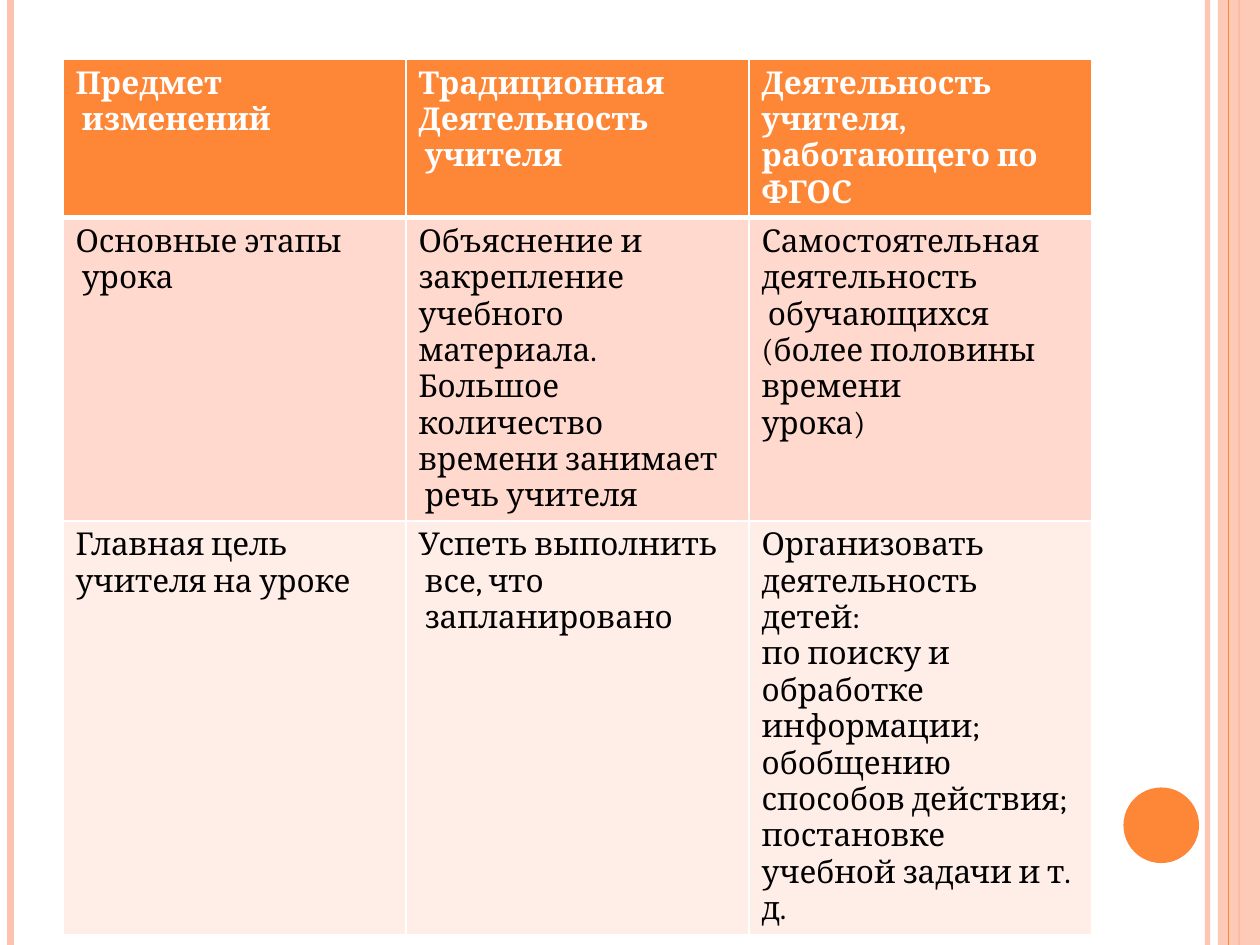
from lxml import etree
from pptx import Presentation
from pptx import util as u
from pptx.dml.color import RGBColor
from pptx.enum import shapes
from pptx.oxml import ns

COLUMNS, ROWS = 120, 90
ORANGE, PEACH, WHITE, BLACK = "FE8637", "FEC3AE", "FFFFFF", "000000"
INDENT = "›"  # marks a paragraph whose first line is indented

HEADER = [
    ["Предмет", "›изменений"],
    ["Традиционная", "Деятельность", "›учителя"],
    ["Деятельность учителя,", "работающего по ФГОС"],
]
STAGES = [
    ["Основные этапы", "›урока"],
    ["Объяснение и", "закрепление", "учебного материала.",
     "Большое количество", "времени занимает", "›речь учителя"],
    ["Самостоятельная деятельность",
     "›обучающихся (более половины времени", "урока)"],
]
GOAL = [
    ["Главная цель", "учителя на уроке"],
    ["Успеть выполнить", "›все, что", "›запланировано"],
    ["Организовать деятельность детей:",
     "по поиску и обработке информации;",
     "обобщению способов действия;",
     "постановке учебной задачи и т. д."],
]
# cells, height in grid rows, fill, text colour, bold, top and bottom border
TABLE_ROWS = [
    (HEADER, 14.9, ORANGE, WHITE, True, 1, 3),
    (STAGES, 28.9, "FFD9CE", BLACK, False, 3, 1),
    (GOAL, 39.4, "FFEDE8", BLACK, False, 1, 1),
]


def colour(value):
    return RGBColor.from_string(value)


def add_node(parent, tag, **attributes):
    return etree.SubElement(parent, ns.qn(tag), attributes)


def set_opacity(element, percent):
    """Apply an opacity to the first solid colour inside the element."""
    if percent < 100:
        srgb = next(element.iter(ns.qn("a:srgbClr")))
        add_node(srgb, "a:alpha", val=str(percent * 1000))


class SlideBuilder:
    """Holds the style and the slide; lengths are in grid columns and rows."""

    font = {"name": "Cambria", "size": u.Pt(18)}

    def __init__(self, deck):
        self.unit_x = deck.slide_width / COLUMNS
        self.unit_y = deck.slide_height / ROWS
        self.page = deck.slides.add_slide(deck.slide_layouts[6])
        background = self.page.background.fill
        background.solid()
        background.fore_color.rgb = colour(WHITE)

    def place(self, column, row):
        return round(column * self.unit_x), round(row * self.unit_y)

    def stripe(self, column, line_colour, width, opacity=100):
        """Draw a vertical line over the full height of the slide."""
        line = self.page.shapes.add_connector(
            shapes.MSO_CONNECTOR.STRAIGHT,
            *self.place(column, 0), *self.place(column, ROWS))
        line.line.color.rgb = colour(line_colour)
        line.line.width = u.Pt(width)
        properties = line._element.spPr
        set_opacity(properties, opacity)
        add_node(properties, "a:effectLst")

    def shape(self, kind, column, row, width, height, fill, opacity=100):
        shape = self.page.shapes.add_shape(
            kind, *self.place(column, row), *self.place(width, height))
        shape.shadow.inherit = False
        shape.fill.solid()
        shape.fill.fore_color.rgb = colour(fill)
        shape.line.fill.background()
        set_opacity(shape._element.spPr, opacity)

    def table(self, column, row, width, rows):
        height = sum(entry[1] for entry in rows)
        count = len(rows[0][0])
        table = self.page.shapes.add_table(
            len(rows), count,
            *self.place(column, row), *self.place(width, height)).table
        for table_column in table.columns:
            table_column.width = self.place(width / count, 0)[0]
        for r, (cells, row_height, fill, ink, bold, top, bottom) in enumerate(rows):
            table.rows[r].height = self.place(0, row_height)[1]
            for c, lines in enumerate(cells):
                cell = table.cell(r, c)
                self.borders(cell, {"L": 1, "R": 1, "T": top, "B": bottom})
                cell.fill.solid()
                cell.fill.fore_color.rgb = colour(fill)
                self.paragraphs(cell.text_frame, lines, ink, bold)

    def borders(self, cell, widths):
        properties = cell._tc.get_or_add_tcPr()
        for side, width in widths.items():
            line = add_node(properties, f"a:ln{side}", w=str(u.Pt(width)))
            add_node(add_node(line, "a:solidFill"), "a:srgbClr", val=WHITE)

    def paragraphs(self, frame, lines, ink, bold):
        for number, line in enumerate(lines):
            para = frame.add_paragraph() if number else frame.paragraphs[0]
            if line.startswith(INDENT):
                properties = para._p.get_or_add_pPr()
                properties.set("marL", "0")
                properties.set("indent", str(u.Inches(0.05)))
            span = para.add_run()
            span.text = line.removeprefix(INDENT)
            for name, value in {**self.font, "bold": bold}.items():
                setattr(span.font, name, value)
            span.font.color.rgb = colour(ink)


def main():
    deck = Presentation()
    deck.slide_width, deck.slide_height = u.Inches(10), u.Inches(7.5)
    slide = SlideBuilder(deck)
    slide.stripe(115, PEACH, 3, opacity=93)
    slide.stripe(1, PEACH, 4.5)
    slide.stripe(118, ORANGE, 1.5)
    slide.shape(shapes.MSO_SHAPE.RECTANGLE, 116, 0, 4, ROWS, PEACH, opacity=87)
    slide.stripe(117, ORANGE, 0.75)
    slide.shape(shapes.MSO_SHAPE.OVAL, 107, 75, 7.2, 7.2, ORANGE)
    slide.table(6, 5.67, 98, TABLE_ROWS)
    deck.save("out.pptx")


if __name__ == "__main__":
    main()
